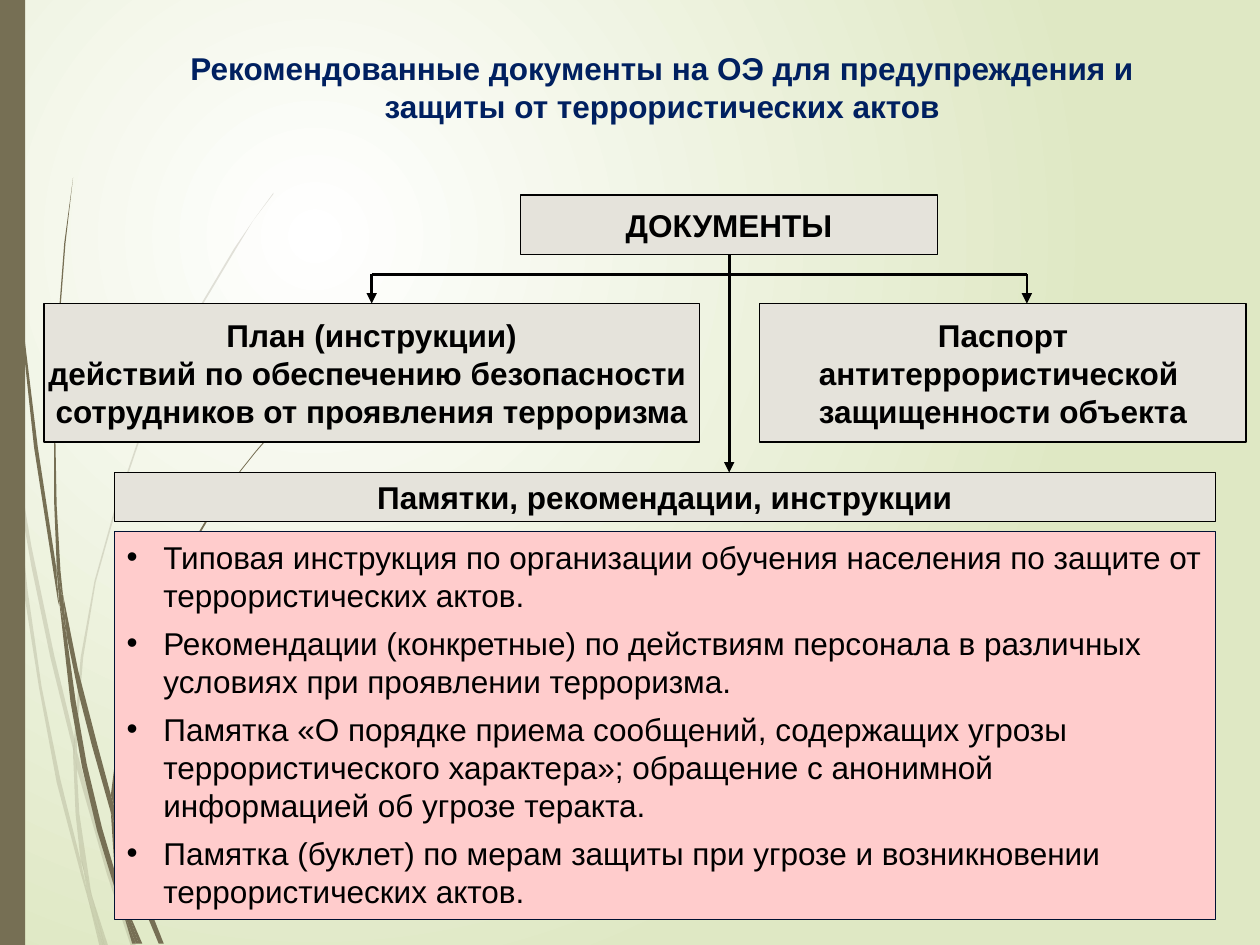
import lxml.etree
import pptx
import pptx.dml.color
import pptx.enum.shapes
import pptx.enum.text
import pptx.oxml.ns
import pptx.util

Pt = pptx.util.Pt
RGB = pptx.dml.color.RGBColor
qn = pptx.oxml.ns.qn
ALIGN = pptx.enum.text.PP_ALIGN
ANCHOR = pptx.enum.text.MSO_ANCHOR

WHITE = RGB(0xFF, 0xFF, 0xFF)
LIME = RGB(0xDF, 0xE8, 0xC4)
OLIVE = RGB(0x76, 0x6F, 0x54)
NAVY = RGB(0x00, 0x20, 0x60)
STONE = RGB(0xE5, 0xE3, 0xDB)
PINK = RGB(0xFF, 0xCC, 0xCC)
INK = RGB(0x00, 0x11, 0x32)
BLACK = RGB(0x00, 0x00, 0x00)


def add(node, tag, **attrs):
    """Append an XML child with the given attributes."""
    child = lxml.etree.SubElement(node, qn(tag))
    for key, val in attrs.items():
        child.set(key, val)
    return child


def write(box, lines, color=BLACK, bold=True, align=ALIGN.CENTER,
          anchor=ANCHOR.MIDDLE, wrap=False, bullet=None):
    frame = box.text_frame
    frame.word_wrap = wrap
    frame.vertical_anchor = anchor
    for i, line in enumerate(lines):
        para = frame.paragraphs[0] if i == 0 else frame.add_paragraph()
        para.alignment = align
        run = para.add_run()
        run.text = line
        run.font.name = "Arial"
        run.font.size = Pt(18)
        run.font.bold = bold
        run.font.color.rgb = color
        if bullet:
            para.space_before = Pt(6)
            props = para._p.get_or_add_pPr()
            props.set("marL", str(Pt(21)))
            props.set("indent", str(-Pt(21)))
            add(props, "a:buFont", typeface="Arial")
            add(props, "a:buChar", char=bullet)


deck = pptx.Presentation()
deck.slide_width, deck.slide_height = Pt(720), Pt(540)
slide = deck.slides.add_slide(deck.slide_layouts[6])
shapes = slide.shapes

# Background: round gradient centred in the upper left
fill = slide.background.fill
fill.gradient()
for stop, color in zip(fill.gradient_stops, (WHITE, LIME)):
    stop.color.rgb = color
grad = next(slide.element.iter(qn("a:gradFill")))
lin = grad.find(qn("a:lin"))
glow = lxml.etree.Element(qn("a:path"))
glow.set("path", "circle")
add(glow, "a:fillToRect", l="50000", t="50000", r="100000", b="100000")
grad.replace(lin, glow)

# Grass blades: outlines in hundredths of an inch (0.72 pt)
PALE = [
    [(8, 350), (6, 322), (0, 282), (0, 299), (7, 344)],
    [(40, 522), (59, 599), (59, 586), (43, 520), (25, 434), (10, 345),
     (12, 376), (25, 450)],
    [(64, 607), (61, 596), (61, 610), (85, 694), (104, 751), (108, 751),
     (88, 692)],
    [(83, 751), (86, 751), (73, 711)],
    [(64, 683), (48, 619), (33, 545), (22, 469), (12, 376), (8, 350),
     (19, 470), (31, 546), (45, 621), (64, 693), (70, 714), (69, 707)],
    [(58, 599), (60, 646), (64, 683), (67, 692), (73, 711), (72, 706),
     (63, 646), (61, 610), (61, 608)],
    [(61, 584), (66, 522), (76, 462), (92, 405), (111, 349), (134, 296),
     (159, 245), (187, 198), (201, 175), (217, 154), (217, 153), (201, 175),
     (186, 197), (158, 244), (133, 295), (110, 348), (91, 404), (75, 461),
     (64, 522), (59, 584), (59, 586), (61, 596)],
    [(70, 714), (79, 751), (82, 751)],
    [(61, 608), (61, 610), (61, 596), (59, 586), (58, 599)],
    [(67, 692), (65, 683), (69, 707), (70, 714), (82, 751), (83, 751),
     (73, 711)],
]
DARK = [
    [(5, 110), (14, 233), (27, 355), (46, 477), (47, 481), (45, 457),
     (45, 453), (30, 355), (15, 232), (6, 109), (4, 48), (3, 0), (2, 0),
     (3, 48)],
    [(73, 592), (88, 645), (88, 633), (88, 631), (77, 590), (62, 532),
     (50, 472), (53, 505), (62, 549)],
    [(94, 649), (91, 641), (91, 656), (109, 708), (126, 749), (130, 749),
     (113, 706)],
    [(91, 691), (81, 657), (69, 607), (60, 556), (53, 505), (47, 477),
     (56, 557), (65, 608), (77, 659), (92, 708), (97, 722), (96, 717)],
    [(50, 472), (48, 453), (45, 401), (44, 349), (45, 297), (48, 245),
     (52, 193), (58, 141), (51, 193), (47, 245), (44, 297), (43, 349),
     (43, 399), (45, 449), (49, 472)],
    [(110, 749), (113, 749), (100, 719)],
    [(47, 477), (53, 505), (50, 472), (49, 472), (45, 449), (45, 453)],
    [(91, 633), (95, 592), (103, 552), (115, 514), (131, 476), (149, 440),
     (169, 406), (191, 374), (203, 359), (216, 344), (215, 344), (203, 358),
     (191, 373), (168, 405), (148, 439), (129, 474), (113, 512), (101, 551),
     (93, 591), (88, 631), (91, 641)],
    [(97, 722), (105, 749), (108, 749)],
    [(88, 645), (91, 691), (96, 706), (100, 719), (100, 716), (94, 686),
     (91, 656), (90, 651)],
    [(88, 645), (90, 651), (91, 656), (91, 641), (88, 631), (88, 633)],
    [(96, 706), (91, 691), (96, 717), (97, 722), (108, 749), (110, 749),
     (100, 719)],
]
for blades, alpha in ((PALE, "20000"), (DARK, "100000")):
    for first, *rest in blades:
        pen = shapes.build_freeform(*first, scale=Pt(0.72))
        pen.add_line_segments(rest, close=True)
        blade = pen.convert_to_shape()
        blade.shadow.inherit = False
        blade.fill.solid()
        blade.fill.fore_color.rgb = OLIVE
        add(next(blade.fill._xPr.iter(qn("a:srgbClr"))), "a:alpha", val=alpha)
        blade.line.fill.background()

# Left stripe, then the labelled boxes
CARDS = [
    (0, 0, 14.4, 540, OLIVE, None, [], {}),
    (297.4, 111.4, 238.3, 33.9, STONE, BLACK, ["ДОКУМЕНТЫ"], {}),
    (25.2, 173.5, 374.4, 79.2, STONE, BLACK,
     ["План (инструкции)", "действий по обеспечению безопасности ",
      "сотрудников от проявления терроризма"], {}),
    (434.2, 173.5, 277.9, 79.2, STONE, BLACK,
     ["Паспорт", "антитеррористической ", "защищенности объекта"], {}),
    (65.3, 270, 629.3, 28.2, STONE, BLACK,
     ["Памятки, рекомендации, инструкции"], {}),
    (65.3, 303.8, 629.3, 221.8, PINK, INK,
     ["Типовая инструкция по организации обучения населения по защите от "
      "террористических актов.",
      "Рекомендации (конкретные) по действиям персонала в различных "
      "условиях при проявлении терроризма.",
      "Памятка «О порядке приема сообщений, содержащих угрозы "
      "террористического характера»; обращение с анонимной информацией "
      "об угрозе теракта.",
      "Памятка (буклет) по мерам защиты при угрозе и возникновении "
      "террористических актов."],
     dict(bold=False, align=ALIGN.LEFT, anchor=ANCHOR.TOP, wrap=True,
          bullet="•")),
]
for x, y, w, h, color, edge, lines, form in CARDS:
    card = shapes.add_shape(pptx.enum.shapes.MSO_SHAPE.RECTANGLE,
                            Pt(x), Pt(y), Pt(w), Pt(h))
    card.shadow.inherit = False
    card.fill.solid()
    card.fill.fore_color.rgb = color
    if edge is None:
        card.line.fill.background()
    else:
        card.line.color.rgb = edge
        card.line.width = Pt(0.75)
    write(card, lines, **form)

# Title
title = shapes.add_textbox(Pt(81.4), Pt(24.5), Pt(594), Pt(53.3))
write(title, ["Рекомендованные документы на ОЭ для предупреждения и защиты "
              "от террористических актов"],
      color=NAVY, anchor=ANCHOR.TOP, wrap=True)

# Branches from the top box
LEFT, MID, RIGHT, BAR = 212.4, 416.7, 586.8, 156.7
for x1, y1, x2, y2, arrow in (
        (LEFT, BAR, RIGHT, BAR, False),
        (LEFT, BAR, LEFT, 173.5, True),
        (MID, 145.3, MID, 270, True),
        (RIGHT, BAR, RIGHT, 173.5, True)):
    link = shapes.add_connector(pptx.enum.shapes.MSO_CONNECTOR.STRAIGHT,
                                Pt(x1), Pt(y1), Pt(x2), Pt(y2))
    link.line.color.rgb = BLACK
    link.line.width = Pt(1.5)
    if arrow:
        add(link.line._get_or_add_ln(), "a:tailEnd", type="triangle")
    add(link._element.spPr, "a:effectLst")

deck.save("out.pptx")
